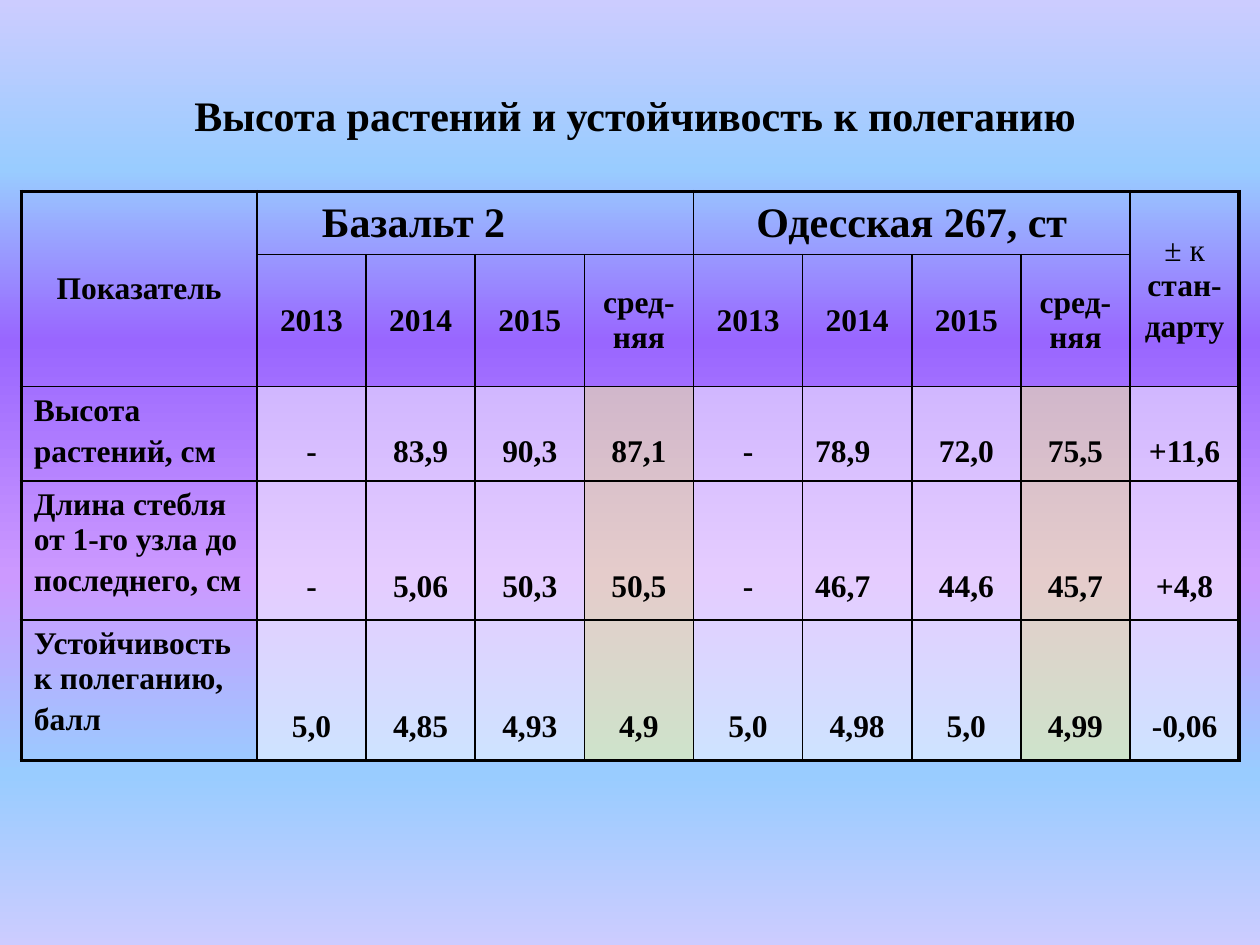
from lxml.etree import SubElement as Sub
from pptx import Presentation
from pptx.dml.color import RGBColor
from pptx.enum.text import MSO_ANCHOR as Anchor, PP_ALIGN as Align
from pptx.oxml.ns import qn
from pptx.util import Cm, Pt


def color(code):
    return RGBColor.from_string(code)


def write(frame, lines, size, align):
    frame.word_wrap = True
    for i, line in enumerate(lines):
        para = frame.paragraphs[0] if i == 0 else frame.add_paragraph()
        form = {"alignment": align, "space_before": Pt(3.5 if i else 0)}
        for key, val in form.items():
            setattr(para, key, val)
        for text, bold in line:
            run = para.add_run()
            run.text = text
            look = {"name": "Times New Roman", "size": Pt(size), "bold": bold}
            for key, val in look.items():
                setattr(run.font, key, val)
            run.font.color.rgb = color("000000")


prs = Presentation()
prs.slide_width, prs.slide_height = Cm(25.4), Cm(19.05)
slide = prs.slides.add_slide(prs.slide_layouts[6])

back = slide.background.fill
back.gradient()
back.gradient_angle = 270
stops = next(slide.element.iter(qn("a:gsLst")))
for stop in list(stops):
    stops.remove(stop)
shades = [(0, "CCCCFF"), (18, "99CCFF"), (36, "9966FF"),
          (61, "CC99FF"), (82, "99CCFF"), (100, "CCCCFF")]
for pos, code in shades:
    stop = Sub(stops, qn("a:gs"), pos=str(pos * 1000))
    Sub(stop, qn("a:srgbClr"), val=code)

title = slide.shapes.add_textbox(Cm(0.84), Cm(1.47), Cm(23.93), Cm(1.7)).text_frame
title.vertical_anchor = Anchor.MIDDLE
write(title, [[("Высота растений и устойчивость к полеганию", True)]], 24, Align.CENTER)

wide = [4.75] + [2.2] * 9
high = [1.24, 1.75, 1.9, 2.8, 2.84]
rows, cols = len(high), len(wide)
grid = slide.shapes.add_table(rows, cols, Cm(0.43), Cm(3.86), Cm(sum(wide)), Cm(sum(high))).table
grid.first_row = grid.horz_banding = False
for col, size in zip(grid.columns, wide):
    col.width = Cm(size)
for row, size in zip(grid.rows, high):
    row.height = Cm(size)

for r in range(rows):
    for c in range(cols):
        cell = grid.cell(r, c)
        props = cell._tc.get_or_add_tcPr()
        edges = {"L": c == 0, "R": c == cols - 1, "T": r == 0, "B": r == rows - 1}
        for side, outer in edges.items():
            line = Sub(props, qn("a:ln" + side), w=str(Pt(2.25 if outer else 1)))
            Sub(Sub(line, qn("a:solidFill")), qn("a:srgbClr"), val="000000")
        if r < 2 or c == 0:
            cell.fill.background()
        else:
            cell.fill.solid()
            cell.fill.fore_color.rgb = color("FFFF99" if c in (4, 8) else "FFFFFF")
            Sub(props.find(qn("a:solidFill"))[0], qn("a:alpha"), val="50000")

for top, left, low, right in [(0, 0, 1, 0), (0, 1, 0, 4), (0, 5, 0, 8), (0, 9, 1, 9)]:
    grid.cell(top, left).merge(grid.cell(low, right))

heads = [
    (0, 0, [[("Показатель", True)]], 18, Align.CENTER),
    (0, 1, [[("Базальт 2", True)]], 24, Align.LEFT),
    (0, 5, [[("Одесская 267, ст", True)]], 24, Align.CENTER),
    (0, 9, [[("± к ", False), ("стан-", True)], [("дарту", True)]], 18, Align.CENTER),
]
for i, text in enumerate(["2013", "2014", "2015", "сред-няя"] * 2):
    heads.append((1, i + 1, [[(text, True)]], 18, Align.CENTER))
for r, c, lines, size, align in heads:
    cell = grid.cell(r, c)
    cell.vertical_anchor = Anchor.MIDDLE
    write(cell.text_frame, lines, size, align)
grid.cell(0, 1).margin_left = Cm(1.31)

data = [
    (["Высота", "растений, см"], 0.23,
     ["-", "83,9", "90,3", "87,1", "-", "78,9", "72,0", "75,5", "+11,6"]),
    (["Длина стебля от 1-го узла до", "последнего, см"], 0.31,
     ["-", "5,06", "50,3", "50,5", "-", "46,7", "44,6", "45,7", "+4,8"]),
    (["Устойчивость к полеганию,", "балл"], 0.33,
     ["5,0", "4,85", "4,93", "4,9", "5,0", "4,98", "5,0", "4,99", "-0,06"]),
]
for r, (label, gap, vals) in enumerate(data, 2):
    write(grid.cell(r, 0).text_frame, [[(text, True)] for text in label], 18, Align.LEFT)
    for c, val in enumerate(vals, 1):
        cell = grid.cell(r, c)
        form = {"vertical_anchor": Anchor.BOTTOM, "margin_bottom": Cm(gap)}
        for key, item in form.items():
            setattr(cell, key, item)
        align = Align.LEFT if c == 6 and r < 4 else Align.CENTER
        write(cell.text_frame, [[(val, True)]], 18, align)

prs.save("out.pptx")
